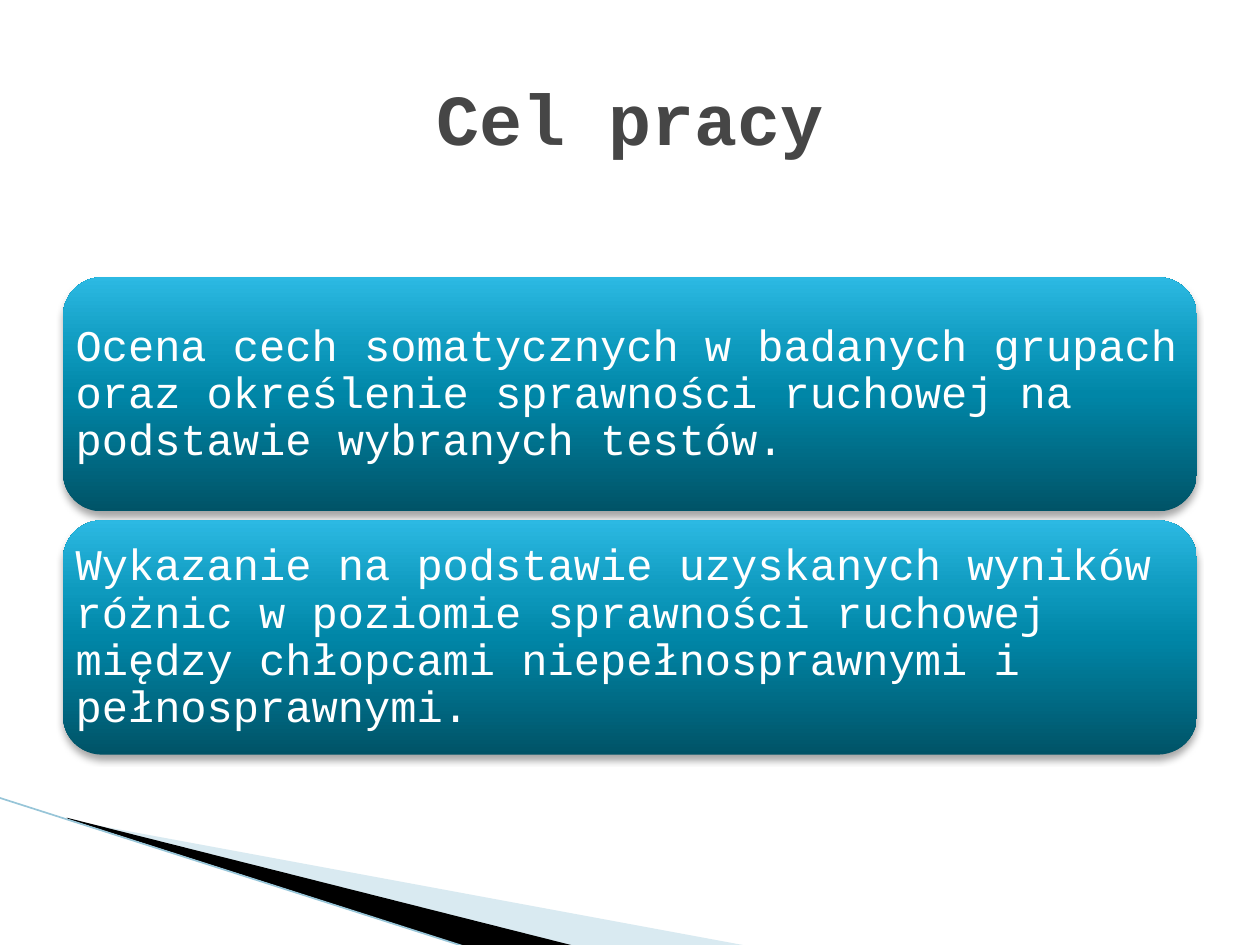
from lxml import etree
from pptx import Presentation
from pptx import util as u
from pptx.dml.color import RGBColor
from pptx.enum import shapes, text
from pptx.oxml import parse_xml
from pptx.oxml.ns import nsdecls, qn

COLORS = {
    "title": "464646", "white": "FFFFFF", "pale": "A0CBDC",
    "black": "000000", "edge": "97C5D8",
}
GRADIENT = [(0, "005367"), (50, "0086A7"), (70, "0E9ABE"), (100, "2CB9E3")]
GOALS = [
    "Ocena cech somatycznych w badanych grupach oraz określenie sprawności "
    "ruchowej na podstawie wybranych testów.",
    "Wykazanie na podstawie uzyskanych wyników różnic w poziomie sprawności "
    "ruchowej między chłopcami niepełnosprawnymi i pełnosprawnymi.",
]


def rgb(name):
    return RGBColor.from_string(COLORS[name])


def write(frame, words, size, color, bold=False, align=text.PP_ALIGN.LEFT,
          spacing=1.0, inset=0.1):
    """Fill a text frame with one formatted paragraph."""
    frame.word_wrap = True
    frame.auto_size = text.MSO_AUTO_SIZE.NONE
    frame.vertical_anchor = text.MSO_ANCHOR.MIDDLE
    frame.margin_left = frame.margin_right = u.Inches(inset)
    para = frame.paragraphs[0]
    para.alignment = align
    para.line_spacing = spacing
    span = para.add_run()
    span.text = words
    span.font.name = "Courier New"
    span.font.size = u.Pt(size)
    span.font.bold = bold
    span.font.color.rgb = rgb(color)


class Builder:
    def __init__(self, deck):
        self.page = deck.slides.add_slide(deck.slide_layouts[5])

    def title(self, words, left, top, width, height):
        box = self.page.shapes.title
        box.left, box.top = u.Inches(left), u.Inches(top)
        box.width, box.height = u.Inches(width), u.Inches(height)
        write(box.text_frame, words, 41, "title", bold=True,
              align=text.PP_ALIGN.CENTER)

    def wedge(self, points, color, alpha=100):
        start, *rest = [(u.Inches(x), u.Inches(y)) for x, y in points]
        outline = self.page.shapes.build_freeform(*start)
        outline.add_line_segments(rest, close=True)
        shape = outline.convert_to_shape()
        shape.shadow.inherit = False
        shape.line.fill.background()
        shape.fill.solid()
        shape.fill.fore_color.rgb = rgb(color)
        if alpha < 100:
            tint = shape.fill._xPr.find(".//" + qn("a:srgbClr"))
            etree.SubElement(tint, qn("a:alpha")).set("val", str(alpha * 1000))

    def line(self, start, end, color, width):
        edge = self.page.shapes.add_connector(
            shapes.MSO_CONNECTOR.STRAIGHT, *map(u.Inches, start + end))
        edge.line.color.rgb = rgb(color)
        edge.line.width = u.Pt(width)
        etree.SubElement(edge._element.spPr, qn("a:effectLst"))

    def card(self, words, left, top, width, height):
        shape = self.page.shapes.add_shape(
            shapes.MSO_SHAPE.ROUNDED_RECTANGLE,
            *map(u.Inches, (left, top, width, height)))
        shape.line.fill.background()
        # Four-stop gradient, dark at the bottom
        stops = "".join(
            f'<a:gs pos="{pos * 1000}"><a:srgbClr val="{color}"/></a:gs>'
            for pos, color in GRADIENT)
        properties = shape._element.spPr
        properties.find(qn("a:prstGeom")).addnext(parse_xml(
            f'<a:gradFill {nsdecls("a")} rotWithShape="1"><a:gsLst>{stops}'
            '</a:gsLst><a:lin ang="16200000" scaled="0"/></a:gradFill>'))
        # Soft shadow below
        properties.append(parse_xml(
            f'<a:effectLst {nsdecls("a")}><a:outerShdw '
            f'blurRad="{u.Pt(4)}" dist="{u.Pt(3)}" dir="5400000" '
            'rotWithShape="0"><a:srgbClr val="000000">'
            '<a:alpha val="35000"/></a:srgbClr></a:outerShdw></a:effectLst>'))
        # The rounded corners already inset the text
        write(shape.text_frame, words, 25, "white", spacing=0.9, inset=0.01)


def main():
    deck = Presentation()
    deck.slide_width, deck.slide_height = u.Inches(10), u.Inches(7.5)
    builder = Builder(deck)

    # Corner decoration
    builder.wedge([(0.55, 6.51), (5.95, 7.51), (4.56, 7.51), (0.55, 6.5)],
                  "pale", alpha=40)
    builder.wedge([(0.53, 6.49), (4.57, 7.51), (3.72, 7.52), (0.54, 6.5)],
                  "black")
    builder.line((-0.01, 6.33), (3.71, 7.52), "edge", 0.95)

    # Title and goals
    builder.title("Cel pracy", 0.5, 0.3, 9, 1.25)
    for row, goal in enumerate(GOALS):
        builder.card(goal, 0.5, 2.2 + row * 1.93, 9, 1.86)

    deck.save("out.pptx")


if __name__ == "__main__":
    main()
